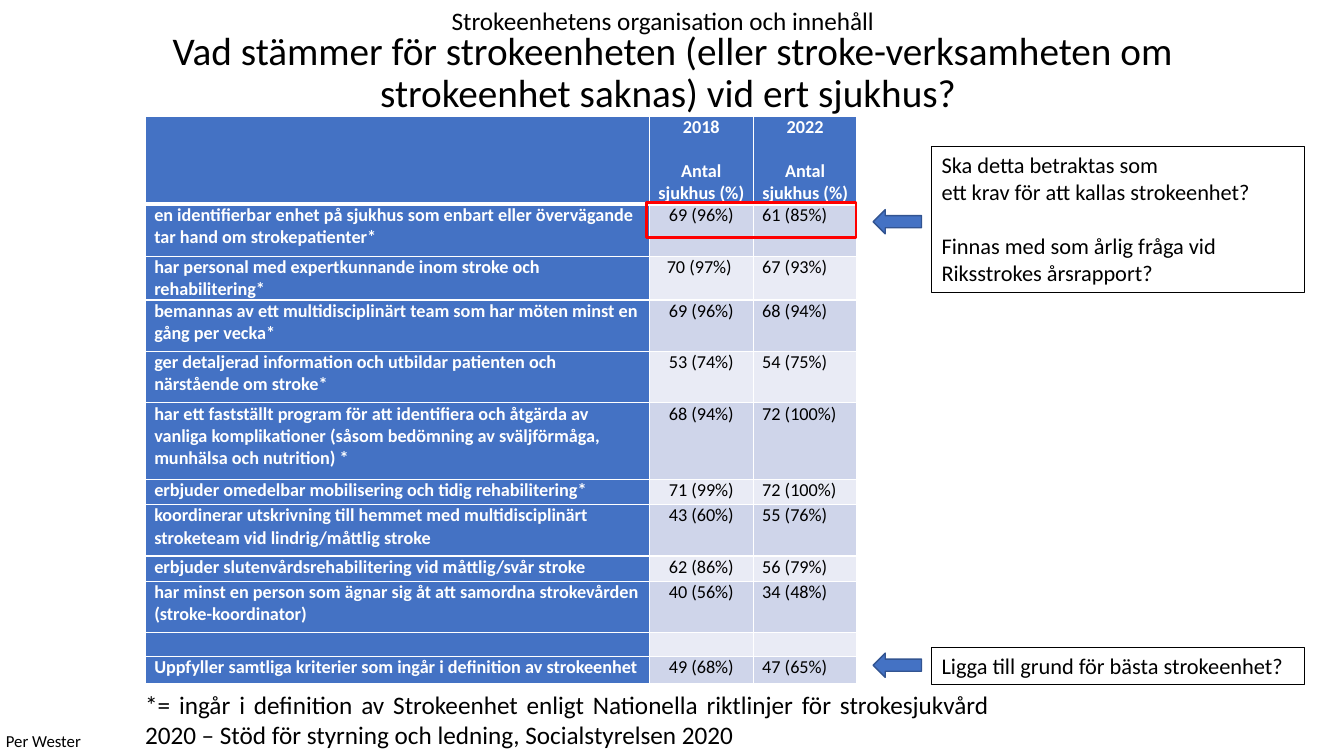
from lxml.etree import SubElement
from pptx import Presentation
from pptx.dml.color import RGBColor
from pptx.enum.shapes import MSO_SHAPE as Shape
from pptx.enum.text import MSO_ANCHOR as Anchor, PP_ALIGN as Align
from pptx.oxml import parse_xml
from pptx.oxml.ns import nsdecls, qn
from pptx.util import Inches, Pt

ANSWERS = [
    ("en identifierbar enhet på sjukhus som enbart eller övervägande tar hand om strokepatienter*",
     "69 (96%)", "61 (85%)", 0.52),
    ("har personal med expertkunnande inom stroke och rehabilitering*",
     "70 (97%) ", "67 (93%)", 0.42),
    ("bemannas av ett multidisciplinärt team som har möten minst en gång per vecka*",
     "69 (96%)", "68 (94%)", 0.51),
    ("ger detaljerad information och utbildar patienten och närstående om stroke*",
     "53 (74%)", "54 (75%)", 0.51),
    ("har ett fastställt program för att identifiera och åtgärda av vanliga komplikationer "
     "(såsom bedömning av sväljförmåga, munhälsa och nutrition) *",
     "68 (94%)", "72 (100%)", 0.76),
    ("erbjuder omedelbar mobilisering och tidig rehabilitering*",
     "71 (99%)", "72 (100%)", 0.25),
    ("koordinerar utskrivning till hemmet med multidisciplinärt stroketeam vid lindrig/måttlig stroke",
     "43 (60%)", "55 (76%)", 0.51),
    ("erbjuder slutenvårdsrehabilitering vid måttlig/svår stroke",
     "62 (86%)", "56 (79%)", 0.25),
    ("har minst en person som ägnar sig åt att samordna strokevården (stroke-koordinator)",
     "40 (56%)", "34 (48%)", 0.51),
    ("", "", "", 0.24),
    ("Uppfyller samtliga kriterier som ingår i definition av strokeenhet",
     "49 (68%)", "47 (65%)", 0.27),
]


def rgb(value):
    return RGBColor.from_string(value)


class SlideBuilder:
    font = "Calibri"
    blue, white, black = "4472C4", "FFFFFF", "000000"
    bands = ("CFD5EA", "E9EBF5")

    def __init__(self, slide):
        self.slide = slide

    def fill_text(self, frame, paragraphs, size, color=black, bold=False,
                  align=Align.LEFT, gap_before=None, spacing=None):
        for index, words in enumerate(paragraphs):
            paragraph = frame.paragraphs[0] if index == 0 else frame.add_paragraph()
            paragraph.text = words
            paragraph.alignment = align
            if spacing:
                paragraph.line_spacing = spacing
            if index == gap_before:
                paragraph.space_before = Pt(size * 1.22)
            for run in paragraph.runs:
                run.font.name = self.font
                run.font.size = Pt(size)
                run.font.bold = bold
                run.font.color.rgb = rgb(color)
            if not words:
                paragraph._p.get_or_add_endParaRPr().set("sz", str(size * 100))

    def text(self, box, words, size, align=Align.LEFT, anchor=Anchor.TOP,
             wrap=True, spacing=None):
        frame = self.slide.shapes.add_textbox(*map(Inches, box)).text_frame
        frame.word_wrap = wrap
        frame.vertical_anchor = anchor
        self.fill_text(frame, [words], size, align=align, spacing=spacing)

    def shape(self, kind, box, line, width, fill=None):
        shape = self.slide.shapes.add_shape(kind, *map(Inches, box))
        shape.shadow.inherit = False
        if fill:
            shape.fill.solid()
            shape.fill.fore_color.rgb = rgb(fill)
        else:
            shape.fill.background()
        shape.line.color.rgb = rgb(line)
        shape.line.width = Pt(width)
        return shape

    def comment(self, top, height, paragraphs, gap_before=None):
        box = self.shape(Shape.RECTANGLE, (9.24, top, 3.7, height), self.black, 0.75)
        box.text_frame.word_wrap = True
        box.text_frame.vertical_anchor = Anchor.TOP
        self.fill_text(box.text_frame, paragraphs, 16, gap_before=gap_before)

    def arrow(self, top):
        self.shape(Shape.LEFT_ARROW, (8.66, top, 0.48, 0.24), "325491", 1, self.blue)

    def cell(self, cell, paragraphs, fill, color, bold, align, top=1, bottom=1, gap_before=None):
        cell.margin_left = cell.margin_right = Inches(0.09)
        cell.margin_top = cell.margin_bottom = 0
        cell.fill.solid()
        cell.fill.fore_color.rgb = rgb(fill)
        self.fill_text(cell.text_frame, paragraphs, 13, color, bold, align, gap_before)
        properties = cell._tc.get_or_add_tcPr()
        for position, (side, width) in enumerate(zip("LRTB", (1, 1, top, bottom))):
            border = parse_xml(f'<a:ln{side} {nsdecls("a")} w="{int(Pt(width))}"/>')
            solid = SubElement(border, qn("a:solidFill"))
            SubElement(solid, qn("a:srgbClr")).set("val", self.white)
            properties.insert(position, border)

    def table(self, box, widths, header_height, headings, answers):
        table = self.slide.shapes.add_table(
            len(answers) + 1, len(widths), *map(Inches, box)).table
        table.first_row = table.horz_banding = False
        for column, width in zip(table.columns, widths):
            column.width = Inches(width)
        table.rows[0].height = Inches(header_height)
        for column, heading in enumerate(headings):
            self.cell(table.cell(0, column), heading, self.blue, self.white, True,
                      Align.CENTER, bottom=3, gap_before=1)
        for row, (*answer, height) in enumerate(answers, 1):
            table.rows[row].height = Inches(height)
            band = self.bands[(row - 1) % 2]
            looks = ((self.blue, self.white, True, Align.LEFT),
                     (band, self.black, False, Align.CENTER),
                     (band, self.black, False, Align.LEFT))
            for column, (words, look) in enumerate(zip(answer, looks)):
                self.cell(table.cell(row, column), [words], *look, top=3 if row == 1 else 1)


def main():
    deck = Presentation()
    deck.slide_width, deck.slide_height = Inches(13.33), Inches(7.5)
    page = SlideBuilder(deck.slides.add_slide(deck.slide_layouts[6]))

    page.text((0.92, 0.01, 11.5, 1.45),
              "Vad stämmer för strokeenheten (eller stroke-verksamheten om "
              "strokeenhet saknas) vid ert sjukhus? ",
              28, Align.CENTER, Anchor.MIDDLE, spacing=0.9)
    unit = "Antal sjukhus (%)"
    page.table((1.44, 1.15, 7.06, 5.62), (5, 1.03, 1.03), 0.85,
               ([""], ["2018", unit], ["2022", unit]), ANSWERS)
    page.shape(Shape.RECTANGLE, (6.41, 2.01, 2.08, 0.35), "FF0000", 2)
    page.text((1.34, 6.79, 8.57, 0.71),
              "*= ingår i definition av Strokeenhet enligt Nationella riktlinjer för "
              "strokesjukvård 2020 – Stöd för styrning och ledning, Socialstyrelsen 2020",
              18, Align.JUSTIFY)
    page.arrow(2.08)
    page.comment(1.45, 1.45, ["Ska detta betraktas som",
                              "ett krav för att kallas strokeenhet?",
                              "Finnas med som årlig fråga vid\nRiksstrokes årsrapport?"],
                 gap_before=2)
    page.text((3.24, 0, 6.67, 0.4), "Strokeenhetens organisation och innehåll", 18, Align.CENTER)
    page.comment(6.42, 0.37, ["Ligga till grund för bästa strokeenhet?"])
    page.arrow(6.48)
    page.text((-0.04, 7.2, 0.95, 0.3), "Per Wester", 12, wrap=False)
    deck.save("out.pptx")


if __name__ == "__main__":
    main()
